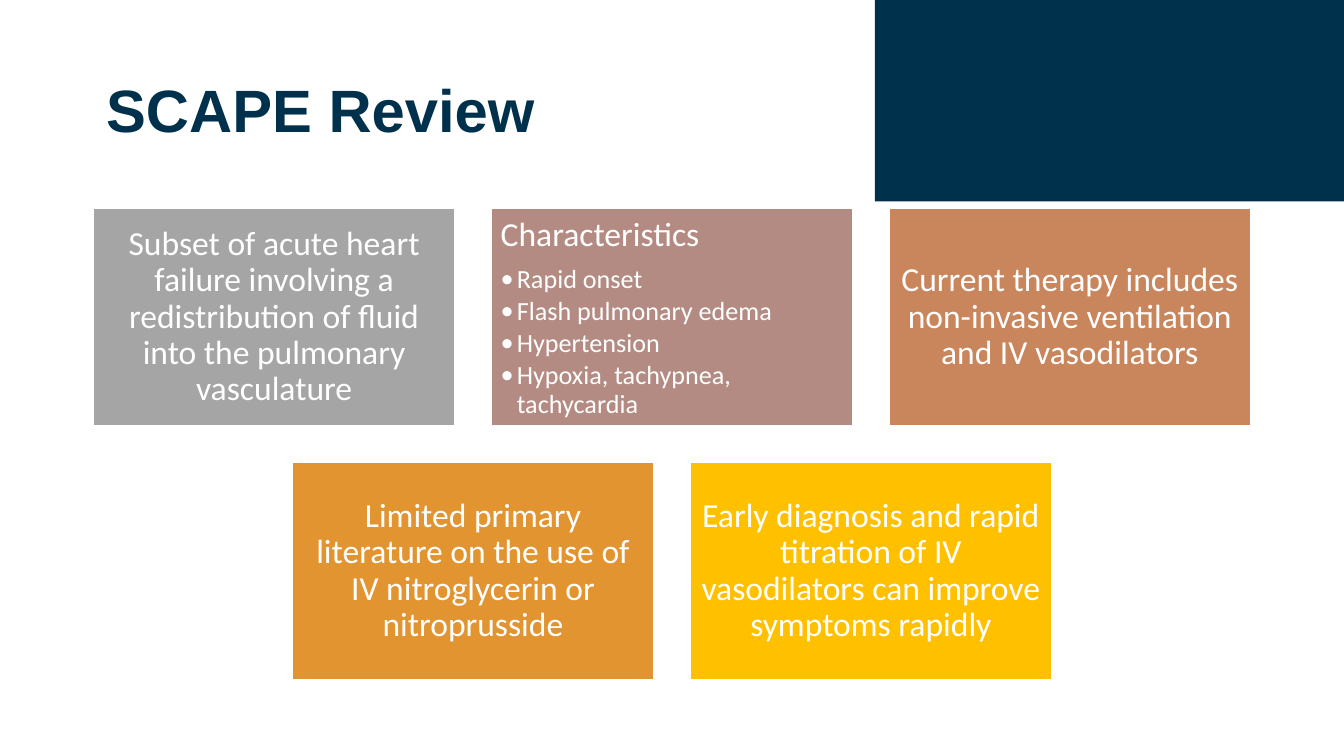
from lxml import etree
from pptx import Presentation, util as u
from pptx.dml.color import RGBColor
from pptx.enum import shapes, text
from pptx.oxml.ns import qn

NAVY = RGBColor(0x00, 0x31, 0x4C)
WHITE = RGBColor(0xFF, 0xFF, 0xFF)
GREY = RGBColor(0xA5, 0xA5, 0xA5)
ROSE = RGBColor(0xB4, 0x8B, 0x83)
COPPER = RGBColor(0xC9, 0x85, 0x5C)
ORANGE = RGBColor(0xE1, 0x94, 0x30)
GOLD = RGBColor(0xFF, 0xC0, 0x00)

SLIDE_WIDTH = 10
SLIDE_HEIGHT = SLIDE_WIDTH * 9 / 16
CARD_WIDTH, CARD_HEIGHT = 2.69, 1.62
GAP = 0.27
CARDS_TOP = 1.55
CARD_INSET = 0.07
BULLET_INDENT = 0.12

# Each row of cards is centred on the slide: (colour, heading, bullet points).
CARD_ROWS = [
    [
        (GREY, "Subset of acute heart failure involving a redistribution "
               "of fluid into the pulmonary vasculature", []),
        (ROSE, "Characteristics",
         ["Rapid onset", "Flash pulmonary edema", "Hypertension",
          "Hypoxia, tachypnea, tachycardia"]),
        (COPPER, "Current therapy includes non-invasive ventilation "
                 "and IV vasodilators", []),
    ],
    [
        (ORANGE, "Limited primary literature on the use of IV nitroglycerin "
                 "or nitroprusside", []),
        (GOLD, "Early diagnosis and rapid titration of IV vasodilators "
               "can improve symptoms rapidly", []),
    ],
]


def write_paragraph(paragraph, words, size=18, font="Calibri", color=WHITE,
                    bold=False, align=text.PP_ALIGN.LEFT, space_after=0,
                    bullet=False):
    paragraph.alignment = align
    paragraph.line_spacing = 0.9
    paragraph.space_before = u.Pt(0)
    paragraph.space_after = u.Pt(space_after)
    if bullet:
        properties = paragraph._p.get_or_add_pPr()
        properties.set("marL", str(u.Inches(BULLET_INDENT)))
        properties.set("indent", str(-u.Inches(BULLET_INDENT)))
        etree.SubElement(properties, qn("a:buFont")).set("typeface", font)
        etree.SubElement(properties, qn("a:buChar")).set("char", "•")
    run = paragraph.add_run()
    run.text = words
    run.font.size = u.Pt(size)
    run.font.name = font
    run.font.bold = bold
    run.font.color.rgb = color


def add_rectangle(slide, left, top, width, height, fill, outline=None):
    rectangle = slide.shapes.add_shape(
        shapes.MSO_SHAPE.RECTANGLE,
        *(u.Inches(length) for length in (left, top, width, height)))
    rectangle.shadow.inherit = False
    rectangle.fill.solid()
    rectangle.fill.fore_color.rgb = fill
    if outline is None:
        rectangle.line.fill.background()
    else:
        rectangle.line.color.rgb = outline
        rectangle.line.width = u.Pt(1)
    return rectangle


def add_title(slide, words):
    title = slide.shapes.title
    title.left, title.top = u.Inches(0.69), u.Inches(0.55)
    title.width, title.height = u.Inches(8.62), u.Inches(0.59)
    frame = title.text_frame
    frame.vertical_anchor = text.MSO_ANCHOR.MIDDLE
    frame.auto_size = text.MSO_AUTO_SIZE.NONE
    write_paragraph(frame.paragraphs[0], words, size=32, font="Arial",
                    color=NAVY, bold=True)


def add_card(slide, left, top, fill, heading, points):
    """A card with a centred statement, or a heading above a bullet list."""
    card = add_rectangle(slide, left, top, CARD_WIDTH, CARD_HEIGHT, fill,
                         outline=WHITE)
    frame = card.text_frame
    frame.word_wrap = True
    frame.margin_left = frame.margin_right = u.Inches(CARD_INSET)
    frame.margin_top = frame.margin_bottom = u.Inches(CARD_INSET)
    if not points:
        frame.vertical_anchor = text.MSO_ANCHOR.MIDDLE
        write_paragraph(frame.paragraphs[0], heading,
                        align=text.PP_ALIGN.CENTER)
        return
    frame.vertical_anchor = text.MSO_ANCHOR.TOP
    write_paragraph(frame.paragraphs[0], heading, space_after=6.3)
    for point in points:
        write_paragraph(frame.add_paragraph(), point, size=14,
                        space_after=2.1, bullet=True)


def add_card_rows(slide):
    for row, cards in enumerate(CARD_ROWS):
        row_width = len(cards) * (CARD_WIDTH + GAP) - GAP
        row_left = (SLIDE_WIDTH - row_width) / 2
        top = CARDS_TOP + row * (CARD_HEIGHT + GAP)
        for column, card in enumerate(cards):
            add_card(slide, row_left + column * (CARD_WIDTH + GAP), top, *card)


def main():
    presentation = Presentation()
    presentation.slide_width = u.Inches(SLIDE_WIDTH)
    presentation.slide_height = u.Inches(SLIDE_HEIGHT)
    title_only = presentation.slide_layouts.get_by_name("Title Only")
    slide = presentation.slides.add_slide(title_only)
    add_rectangle(slide, 6.51, 0, SLIDE_WIDTH - 6.51, 1.5, NAVY)
    add_title(slide, "SCAPE Review")
    add_card_rows(slide)
    presentation.save("out.pptx")


if __name__ == "__main__":
    main()
